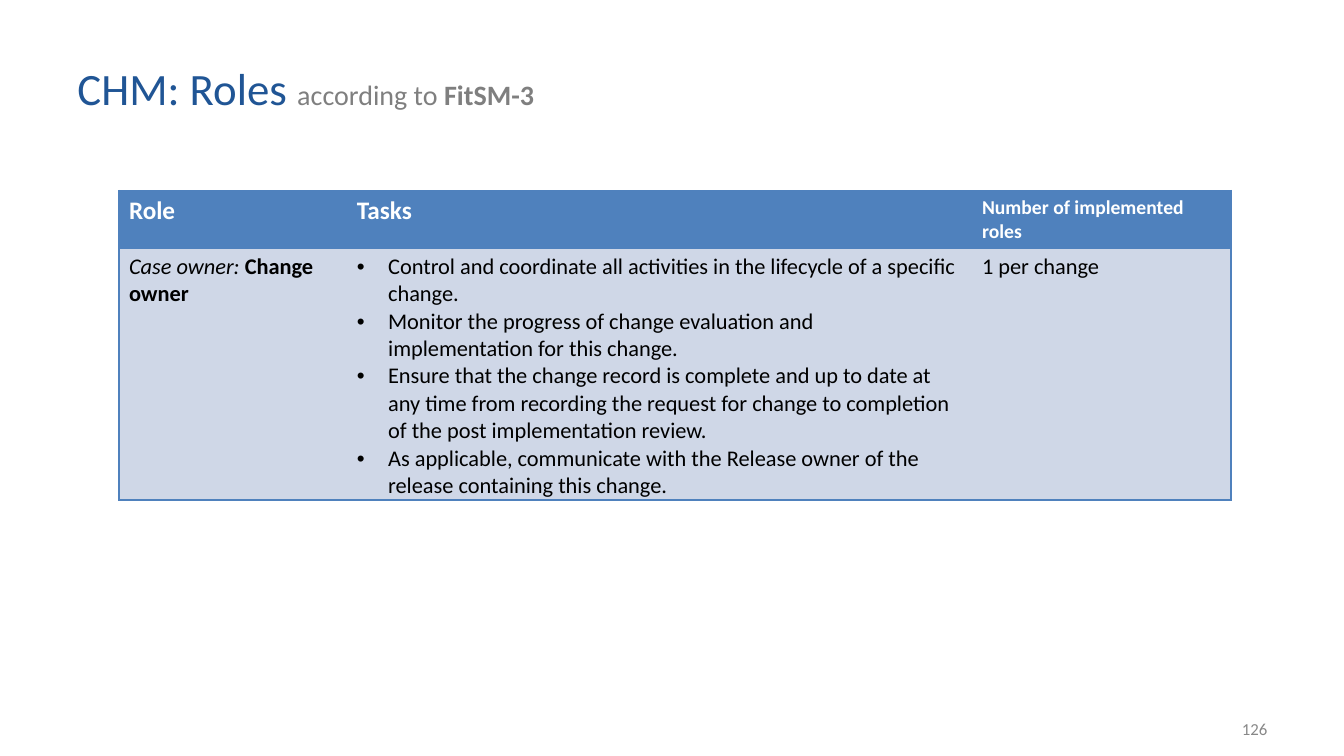
from lxml.etree import SubElement as sub
from pptx import Presentation
from pptx.dml.color import RGBColor
from pptx.enum.text import MSO_ANCHOR as ANCHOR, PP_ALIGN as ALIGN
from pptx.oxml.ns import qn
from pptx.util import Inches, Pt

BLUE, PALE, WHITE, BLACK = "4F81BD", "CFD7E7", "FFFFFF", "000000"
HEAD = dict(size=Pt(18), color=WHITE, bold=True)
BODY = dict(size=Pt(16), color=BLACK, bold=False)
COL_WIDTHS = [2.26, 6.2, 2.57]
ROW_HEIGHTS = [0.57, 2.5]
TASKS = [
    "Control and coordinate all activities in the lifecycle of a specific change.",
    "Monitor the progress of change evaluation and implementation for this change.",
    "Ensure that the change record is complete and up to date at any time from "
    "recording the request for change to completion of the post implementation review.",
    "As applicable, communicate with the Release owner of the release containing this change.",
]
# Each cell is a list of paragraphs, each paragraph a list of (text, format) runs
ROLES = [
    [[[("Role", HEAD)]],
     [[("Tasks", HEAD)]],
     [[("Number of implemented roles", HEAD | dict(size=Pt(14)))]]],
    [[[("Case owner: ", BODY | dict(italic=True)),
       ("Change owner", BODY | dict(bold=True))]],
     [[(task, BODY)] for task in TASKS],
     [[("1 per change", BODY)]]],
]


def rgb(value):
    return RGBColor.from_string(value)


def add_runs(p, runs):
    for text, fmt in runs:
        r = p.add_run()
        r.text = text
        r.font.name = "Calibri"
        for name, value in fmt.items():
            if name == "color":
                r.font.color.rgb = rgb(value)
            else:
                setattr(r.font, name, value)


def add_line(s, box, runs, align=ALIGN.LEFT):
    tf = s.shapes.add_textbox(*map(Inches, box)).text_frame
    tf.word_wrap = True
    tf.vertical_anchor = ANCHOR.MIDDLE
    p = tf.paragraphs[0]
    p.alignment = align
    add_runs(p, runs)


def add_bullet(p):
    pPr = p._p.get_or_add_pPr()
    pPr.set("marL", str(Inches(0.31)))
    pPr.set("indent", str(-Inches(0.31)))
    color = sub(pPr, qn("a:buClr"))
    sub(color, qn("a:srgbClr"), val=BLACK)
    sub(pPr, qn("a:buFont"), typeface="Arial")
    sub(pPr, qn("a:buChar"), char="•")


def set_borders(cell, sides):
    tcPr = cell._tc.get_or_add_tcPr()
    for side in "LRTB":
        ln = sub(tcPr, qn(f"a:ln{side}"), w=str(Pt(0.96)))
        if side in sides:
            fill = sub(ln, qn("a:solidFill"))
            sub(fill, qn("a:srgbClr"), val=BLUE)
        else:
            sub(ln, qn("a:noFill"))


def add_roles_table(s, box):
    table = s.shapes.add_table(len(ROLES), len(COL_WIDTHS), *map(Inches, box)).table
    for column, width in zip(table.columns, COL_WIDTHS):
        column.width = Inches(width)
    for row, height in zip(table.rows, ROW_HEIGHTS):
        row.height = Inches(height)
    outer_sides = ["LTB", "TB", "RTB"]
    for i, row in enumerate(ROLES):
        for j, paragraphs in enumerate(row):
            cell = table.cell(i, j)
            # Borders come before the fill in the cell properties
            set_borders(cell, outer_sides[j])
            cell.fill.solid()
            cell.fill.fore_color.rgb = rgb(PALE if i else BLUE)
            tf = cell.text_frame
            for k, runs in enumerate(paragraphs):
                p = tf.add_paragraph() if k else tf.paragraphs[0]
                if len(paragraphs) > 1:
                    add_bullet(p)
                add_runs(p, runs)


def main():
    prs = Presentation()
    prs.slide_width, prs.slide_height = Inches(13.33), Inches(7.5)
    s = prs.slides.add_slide(prs.slide_layouts[6])

    # Title
    subtitle = dict(size=Pt(20), color="7F7F7F")
    add_line(s, (0.67, 0.3, 9.9, 1.14), [
        ("CHM: Roles ", dict(size=Pt(32), color="205595")),
        ("according to ", subtitle),
        ("FitSM-3", subtitle | dict(bold=True)),
    ])

    # Roles table
    add_roles_table(s, (1.18, 1.89, sum(COL_WIDTHS), sum(ROW_HEIGHTS)))

    # Page number
    add_line(s, (9.56, 7.03, 3.11, 0.4),
             [("126", dict(size=Pt(12), color="888888"))], ALIGN.RIGHT)

    prs.save("out.pptx")


if __name__ == "__main__":
    main()
